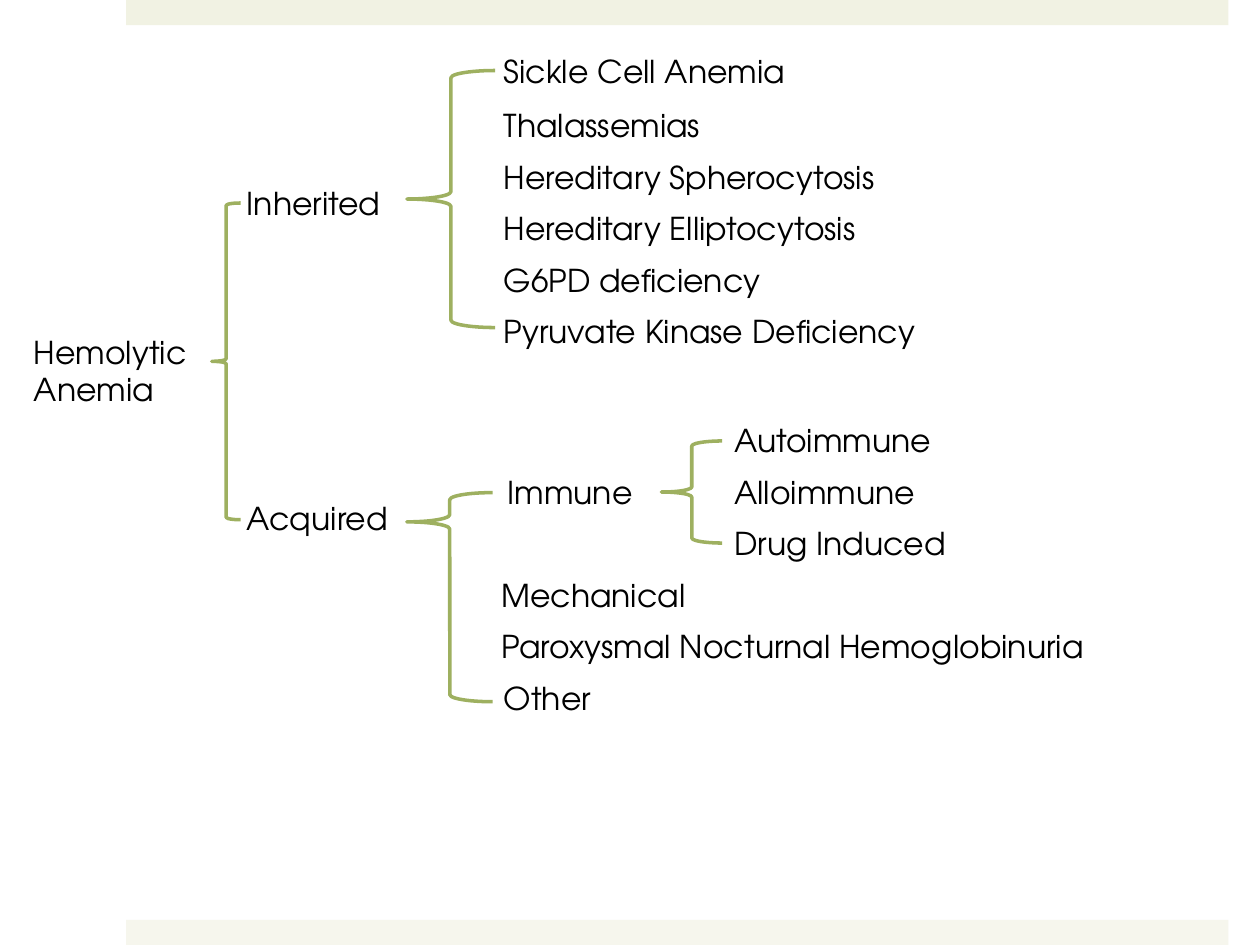
import pptx
import pptx.dml.color
import pptx.enum.shapes
import pptx.enum.text
import pptx.util

COLORS = {
    "text": "000000",
    "brace": "9EB060",
    "top_band": "F1F2E3",
    "bottom_band": "F6F6ED",
}
FONT = "TeX Gyre Adventor"
LINE_HEIGHT = 29
ROW_PITCH = 29.5


def color(name):
    return pptx.dml.color.RGBColor.from_string(COLORS[name])


def write_text(text_frame, text, *, size=18, font=FONT, color_name="text"):
    paragraph = text_frame.paragraphs[0]
    run = paragraph.add_run()
    run.text = text
    run.font.size = pptx.util.Pt(size)
    run.font.name = font
    run.font.color.rgb = color(color_name)


class TreeSlide:
    """Holds the style and the slide being drawn; lengths are in points."""

    def __init__(self, slide, line_width=2):
        self.slide = slide
        self.line_width = line_width

    def add_preset(self, kind, box):
        shape = self.slide.shapes.add_shape(kind, *map(pptx.util.Pt, box))
        shape.shadow.inherit = False
        return shape

    def band(self, top, color_name):
        rectangle = pptx.enum.shapes.MSO_SHAPE.RECTANGLE
        shape = self.add_preset(rectangle, (72, top, 630, 14.4))
        shape.fill.solid()
        shape.fill.fore_color.rgb = color(color_name)
        shape.line.fill.background()

    def label(self, text, left, top, width, height=LINE_HEIGHT):
        box = map(pptx.util.Pt, (left, top, width, height))
        text_frame = self.slide.shapes.add_textbox(*box).text_frame
        text_frame.word_wrap = True
        text_frame.auto_size = pptx.enum.text.MSO_AUTO_SIZE.SHAPE_TO_FIT_TEXT
        write_text(text_frame, text)

    def brace(self, left, top, width, height, point=0.5):
        left_brace = pptx.enum.shapes.MSO_SHAPE.LEFT_BRACE
        shape = self.add_preset(left_brace, (left, top, width, height))
        shape.adjustments[1] = point
        shape.fill.background()
        shape.line.color.rgb = color("brace")
        shape.line.width = pptx.util.Pt(self.line_width)


def main():
    presentation = pptx.Presentation()
    presentation.slide_width = pptx.util.Pt(720)
    presentation.slide_height = pptx.util.Pt(540)
    tree = TreeSlide(presentation.slides.add_slide(presentation.slide_layouts[6]))

    # Bands at the slide edges
    tree.band(0, "top_band")
    tree.band(525.6, "bottom_band")

    # Root and its two branches
    tree.label("Hemolytic Anemia", 12.2, 186.5, 108.7, 51)
    tree.label("Inherited", 133.9, 101.5, 108.7)
    tree.label("Acquired", 133.9, 281.5, 108.7)

    # Inherited causes
    inherited = [
        ("Sickle Cell Anemia", 26, 191),
        ("Thalassemias", 56.9, 132),
        ("Hereditary Spherocytosis", 87, 251),
        ("Hereditary Elliptocytosis", 116, 269),
        ("G6PD deficiency", 145.5, 172),
        ("Pyruvate Kinase Deficiency", 175, 286),
    ]
    for text, top, width in inherited:
        tree.label(text, 280.8, top, width)

    # Acquired causes, on evenly spaced rows from the immune row down
    immune_top = 266.5
    acquired = [
        ("Immune", 0, 283, 109),
        ("Mechanical", 2, 279.4, 133),
        ("Paroxysmal Nocturnal Hemoglobinuria", 3, 279.4, 354),
        ("Other", 4, 280.8, 109),
    ]
    for text, row, left, width in acquired:
        tree.label(text, left, immune_top + row * ROW_PITCH, width)

    # Immune causes, centred on the immune row
    immune = [("Autoimmune", 179), ("Alloimmune", 161), ("Drug Induced", 179)]
    for row, (text, width) in enumerate(immune, start=-1):
        tree.label(text, 412.6, immune_top + row * ROW_PITCH, width)

    # Braces
    tree.brace(121, 116, 16.5, 181)
    tree.brace(232.5, 40.3, 50.4, 146.9)
    tree.brace(232.5, 281.5, 49, 119.5, point=0.14)
    tree.brace(378, 252, 34.6, 58.3)

    presentation.save("out.pptx")


if __name__ == "__main__":
    main()
